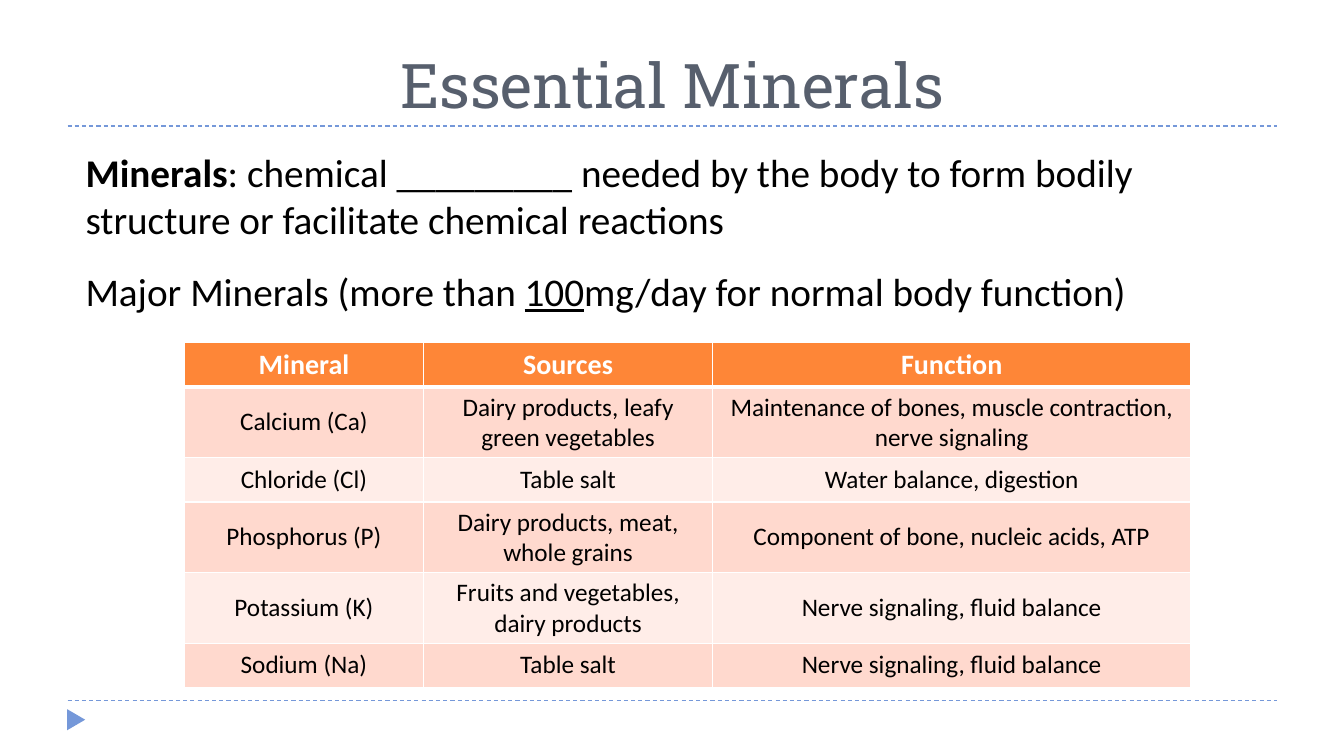
from lxml import etree
from pptx import Presentation
from pptx.dml.color import RGBColor
from pptx.enum import dml, shapes, text
from pptx.oxml.ns import qn
from pptx.util import Inches, Pt

BLUE, ORANGE, WHITE = "7598D9", "FE8637", "FFFFFF"
BANDS = "FFD9CE", "FFEDE8"
COLS = 2.37, 2.87, 4.74
ROWS = 0.44, 0.69, 0.44, 0.69, 0.69, 0.44
MINERALS = [
    ("Mineral", "Sources", "Function"),
    ("Calcium (Ca)", "Dairy products, leafy green vegetables",
     "Maintenance of bones, muscle contraction, nerve signaling"),
    ("Chloride (Cl)", "Table salt", "Water balance, digestion"),
    ("Phosphorus (P)", "Dairy products, meat, whole grains",
     "Component of bone, nucleic acids, ATP"),
    ("Potassium (K)", "Fruits and vegetables, dairy products",
     "Nerve signaling, fluid balance"),
    ("Sodium (Na)", "Table salt", "Nerve signaling, fluid balance"),
]


def color(code):
    return RGBColor.from_string(code)


def add_run(para, words, size=28, face="Calibri", ink="000000",
            bold=False, under=False):
    run = para.add_run()
    run.text = words
    font = run.font
    font.size, font.name = Pt(size), face
    font.bold, font.underline = bold, under
    font.color.rgb = color(ink)


def add_box(slide, left, top, width, height, anchor):
    box = slide.shapes.add_textbox(
        Inches(left), Inches(top), Inches(width), Inches(height))
    frame = box.text_frame
    frame.word_wrap = True
    frame.vertical_anchor = anchor
    return frame


def add_rule(slide, top):
    rule = slide.shapes.add_connector(
        shapes.MSO_CONNECTOR.STRAIGHT,
        Inches(0.67), Inches(top), Inches(12.67), Inches(top))
    rule.line.color.rgb = color(BLUE)
    rule.line.width = Pt(0.75)
    rule.line.dash_style = dml.MSO_LINE.DASH
    etree.SubElement(rule.element.spPr, qn("a:effectLst"))


def add_marker(slide):
    mark = slide.shapes.add_shape(
        shapes.MSO_SHAPE.ISOSCELES_TRIANGLE,
        Inches(0.65), Inches(7.05), Inches(0.21), Inches(0.18))
    mark.rotation = 90
    mark.shadow.inherit = False
    mark.fill.solid()
    mark.fill.fore_color.rgb = color(BLUE)
    mark.line.fill.background()


def set_edges(cell, head):
    """Draw white cell borders, thicker where the header meets the body."""
    props = cell._tc.get_or_add_tcPr()
    for spot, side in enumerate(("lnL", "lnR", "lnT", "lnB")):
        width = 3 if head and side == "lnB" else 1
        edge = etree.Element(qn("a:" + side), w=str(Pt(width)))
        fill = etree.SubElement(edge, qn("a:solidFill"))
        etree.SubElement(fill, qn("a:srgbClr"), val=WHITE)
        props.insert(spot, edge)


def fill_cell(cell, words, head, back):
    cell.fill.solid()
    cell.fill.fore_color.rgb = color(back)
    cell.vertical_anchor = text.MSO_ANCHOR.MIDDLE
    para = cell.text_frame.paragraphs[0]
    para.alignment = text.PP_ALIGN.CENTER
    add_run(para, words, size=20 if head else 18,
            ink=WHITE if head else "000000", bold=head)
    set_edges(cell, head)


def add_grid(slide):
    grid = slide.shapes.add_table(
        len(ROWS), len(COLS), Inches(1.83), Inches(3.4),
        Inches(sum(COLS)), Inches(sum(ROWS))).table
    for col, width in zip(grid.columns, COLS):
        col.width = Inches(width)
    for row, height in zip(grid.rows, ROWS):
        row.height = Inches(height)
    for r, row in enumerate(MINERALS):
        back = BANDS[(r - 1) % 2] if r else ORANGE
        for c, words in enumerate(row):
            fill_cell(grid.cell(r, c), words, r == 0, back)


def add_title(slide):
    frame = add_box(slide, 0.67, 0.17, 12, 1.08, text.MSO_ANCHOR.BOTTOM)
    para = frame.paragraphs[0]
    para.alignment = text.PP_ALIGN.CENTER
    add_run(para, "Essential Minerals", size=44, face="Roboto Slab",
            ink="575F6D")


def add_body(slide):
    frame = add_box(slide, 0.75, 1.42, 11.25, 5.42, text.MSO_ANCHOR.TOP)
    para = frame.paragraphs[0]
    add_run(para, "Minerals", bold=True)
    add_run(para, ": chemical _________ needed by the body to form bodily "
                  "structure or facilitate chemical reactions")
    para = frame.add_paragraph()
    para.space_before = Pt(18)
    add_run(para, "Major Minerals (more than ")
    add_run(para, "100", under=True)
    add_run(para, "mg/day for normal body function)")


def main():
    deck = Presentation()
    deck.slide_width, deck.slide_height = Inches(13.33), Inches(7.5)
    slide = deck.slides.add_slide(deck.slide_layouts[6])
    for top in (6.95, 1.25):
        add_rule(slide, top)
    add_marker(slide)
    add_title(slide)
    add_body(slide)
    add_grid(slide)
    deck.save("out.pptx")


if __name__ == "__main__":
    main()
